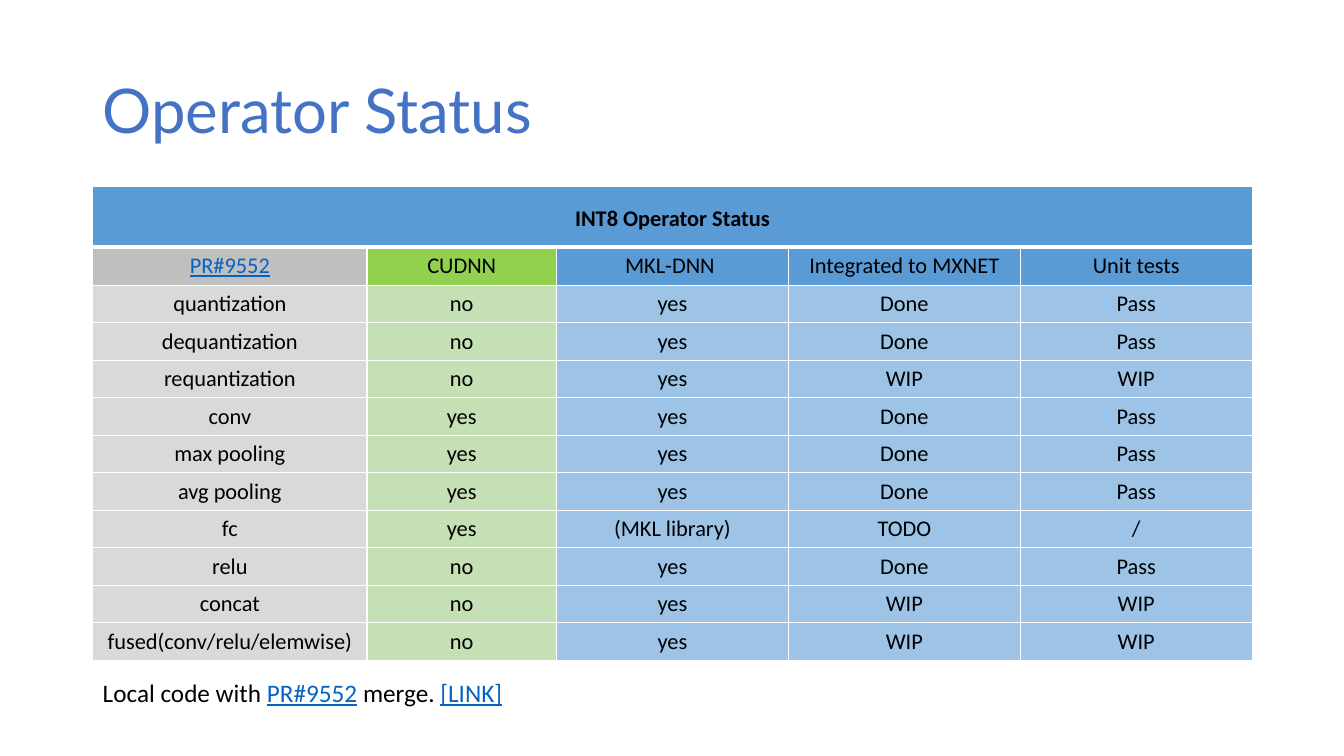
from lxml.etree import SubElement
from pptx import Presentation
from pptx.dml.color import RGBColor as RGB
from pptx.enum.text import MSO_ANCHOR as ANCHOR, PP_ALIGN as ALIGN
from pptx.oxml.ns import qn
from pptx.util import Inches, Pt

COLORS = {
    "title": "4472C4", "text": "000000", "link": "0563C1", "border": "FFFFFF",
    "blue": "5B9BD5", "light_blue": "9DC3E6",
    "green": "92D050", "light_green": "C5E0B4",
    "gray": "BFBFBF", "light_gray": "D9D9D9",
}
HEAD_FILLS = ["gray", "green", "blue", "blue", "blue"]
BODY_FILLS = ["light_" + name for name in HEAD_FILLS]
COL_WIDTHS = [2.72, 1.88, 2.3, 2.3, 2.3]
LINKS = {"PR#9552", "[LINK]"}

TABLE_TITLE = "INT8 Operator Status"
HEADERS = ["PR#9552", "CUDNN", "MKL-DNN ", "Integrated to MXNET", "Unit tests"]
OPERATORS = [
    ["quantization", "no", "yes", "Done", "Pass"],
    ["dequantization", "no", "yes", "Done", "Pass"],
    ["requantization", "no", "yes", "WIP", "WIP"],
    ["conv", "yes", "yes", "Done", "Pass"],
    ["max pooling", "yes", "yes", "Done", "Pass"],
    ["avg pooling", "yes", "yes", "Done", "Pass"],
    ["fc", "yes", "(MKL library)", "TODO", "/"],
    ["relu", "no", "yes", "Done", "Pass"],
    ["concat", "no", "yes", "WIP", "WIP"],
    ["fused(conv/relu/elemwise)", "no", "yes", "WIP", "WIP"],
]


class StatusSlide:
    font, title_font = "Calibri", "Lato"

    def __init__(self, prs):
        self.s = prs.slides.add_slide(prs.slide_layouts[6])

    def style(self, r, size, color="text", font=None, bold=False):
        link = r.text in LINKS
        r.font.name = font or self.font
        r.font.size = Pt(size)
        r.font.bold = bold
        r.font.underline = link
        r.font.color.rgb = RGB.from_string(COLORS["link" if link else color])

    def text(self, x, y, w, h, parts, size, color="text", font=None,
             anchor=ANCHOR.TOP, spacing=1.0):
        tf = self.s.shapes.add_textbox(Inches(x), Inches(y), Inches(w), Inches(h)).text_frame
        tf.word_wrap = True
        tf.vertical_anchor = anchor
        p = tf.paragraphs[0]
        p.line_spacing = spacing
        for part in parts:
            r = p.add_run()
            r.text = part
            self.style(r, size, color, font)

    def borders(self, cell, top, bottom):
        tc_pr = cell._tc.get_or_add_tcPr()
        for side, width in (("L", 1), ("R", 1), ("T", top), ("B", bottom)):
            ln = SubElement(tc_pr, qn("a:ln" + side), w=str(Pt(width)))
            fill = SubElement(ln, qn("a:solidFill"))
            SubElement(fill, qn("a:srgbClr"), val=COLORS["border"])

    def cell(self, cell, text, fill, top=1, bottom=1, bold=False):
        self.borders(cell, top, bottom)
        cell.fill.solid()
        cell.fill.fore_color.rgb = RGB.from_string(COLORS[fill])
        p = cell.text_frame.paragraphs[0]
        p.text = text
        p.alignment = ALIGN.CENTER
        for r in p.runs:
            self.style(r, 16, bold=bold)

    def table(self, x, y, widths, heights):
        table = self.s.shapes.add_table(
            len(heights), len(widths), Inches(x), Inches(y),
            Inches(sum(widths)), Inches(sum(heights))).table
        for col, width in zip(table.columns, widths):
            col.width = Inches(width)
        for row, height in zip(table.rows, heights):
            row.height = Inches(height)
        return table


def main():
    prs = Presentation()
    prs.slide_width, prs.slide_height = Inches(13.33), Inches(7.5)
    slide = StatusSlide(prs)

    # Operator table: a merged title row, column heads, one row per operator
    table = slide.table(0.92, 1.85, COL_WIDTHS, [0.6, 0.38] + [0.37] * len(OPERATORS))
    for c in range(len(COL_WIDTHS)):
        slide.cell(table.cell(0, c), "" if c else TABLE_TITLE, "blue", bottom=3, bold=True)
    table.cell(0, 0).merge(table.cell(0, len(COL_WIDTHS) - 1))
    table.cell(0, 0).text_frame.paragraphs[0].line_spacing = 1.5
    for i, row in enumerate([HEADERS] + OPERATORS, start=1):
        fills = HEAD_FILLS if i == 1 else BODY_FILLS
        for c, (text, fill) in enumerate(zip(row, fills)):
            slide.cell(table.cell(i, c), text, fill, top=3 if i == 1 else 1)

    # Note below the table
    slide.text(0.92, 6.67, 9.69, 0.4,
               ["Local code with ", "PR#9552", " merge. ", "[LINK]"], 18)

    # Title
    slide.text(0.92, 0.4, 11.5, 1.45, ["Operator Status"], 44, "title",
               slide.title_font, ANCHOR.MIDDLE, 0.9)

    prs.save("out.pptx")


if __name__ == "__main__":
    main()
